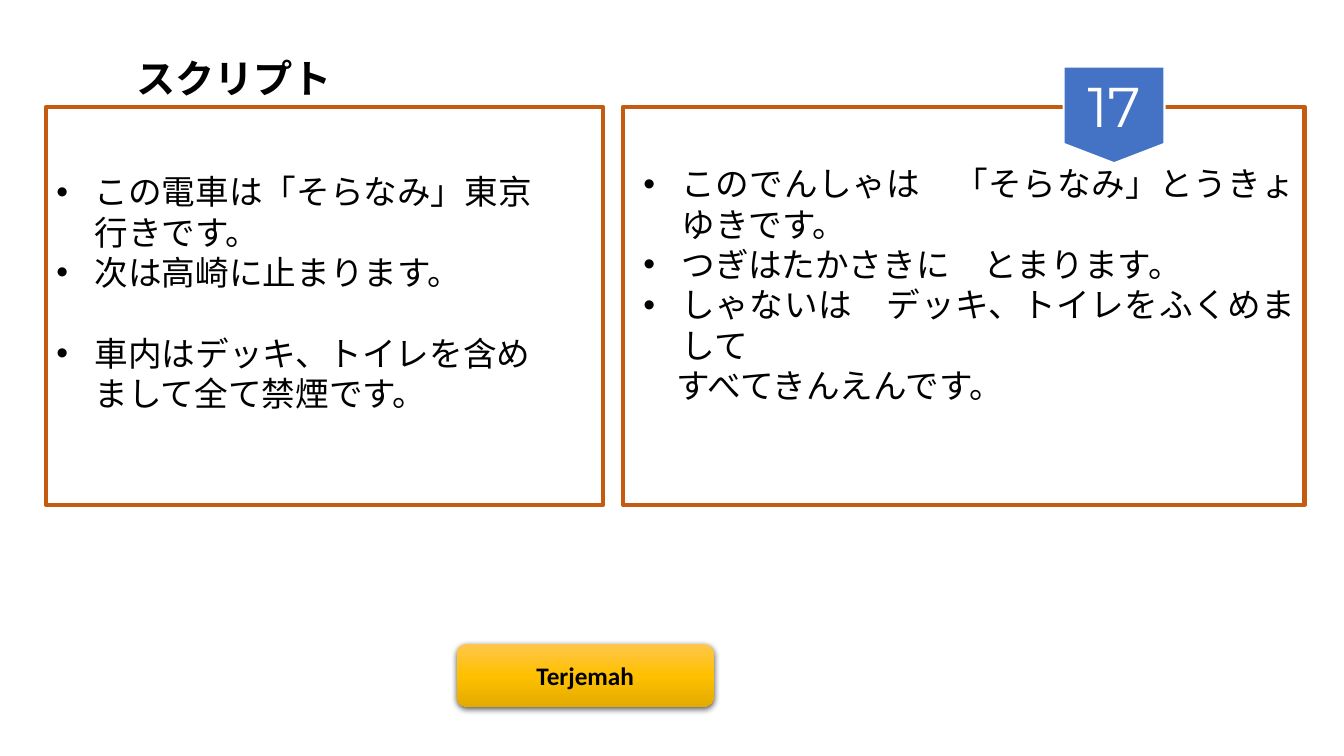
import pptx
import pptx.util
import pptx.dml.color
import pptx.enum.shapes
import pptx.enum.text
import pptx.oxml.ns
from lxml import etree

Inches, Pt = pptx.util.Inches, pptx.util.Pt
RGBColor = pptx.dml.color.RGBColor
SHAPE = pptx.enum.shapes.MSO_SHAPE
ALIGN = pptx.enum.text.PP_ALIGN
ANCHOR = pptx.enum.text.MSO_ANCHOR
AUTO_SIZE = pptx.enum.text.MSO_AUTO_SIZE
qn = pptx.oxml.ns.qn

BLACK = RGBColor(0x00, 0x00, 0x00)
WHITE = RGBColor(0xFF, 0xFF, 0xFF)
ORANGE = RGBColor(0xC5, 0x5A, 0x11)
BLUE = RGBColor(0x44, 0x72, 0xC4)
GOLD_LIGHT = RGBColor(0xFF, 0xC6, 0x4B)
GOLD = RGBColor(0xFF, 0xC0, 0x00)
GOLD_DARK = RGBColor(0xE3, 0xAB, 0x00)

FRAME_TOP, FRAME_HEIGHT = 1.06, 3.95
HANGING = 0.38
LINE_GAP = Pt(29)

KANJI = ["この電車は「そらなみ」東京行きです。",
         "次は高崎に止まります。",
         "車内はデッキ、トイレを含めまして全て禁煙です。"]
KANA = ["このでんしゃは　「そらなみ」とうきょゆきです。",
        "つぎはたかさきに　とまります。",
        "しゃないは　デッキ、トイレをふくめまして"]
KANA_ENDING = "すべてきんえんです。"


def place(s, left, top, width, height):
    s.left, s.top = Inches(left), Inches(top)
    s.width, s.height = Inches(width), Inches(height)


def style(p, name, size, color, bold=False):
    for r in p.runs:
        r.font.name, r.font.size = name, Pt(size)
        r.font.color.rgb, r.font.bold = color, bold


def add_title(s, box):
    place(s, *box)
    tf = s.text_frame
    tf.text = "スクリプト"
    tf.auto_size = AUTO_SIZE.NONE
    tf.vertical_anchor = ANCHOR.TOP
    p = tf.paragraphs[0]
    p.alignment = ALIGN.LEFT
    style(p, "Calibri", 28, BLACK, True)


def set_indent(p, margin, hanging, bullet):
    pPr = p._p.get_or_add_pPr()
    pPr.set("marL", str(Inches(margin)))
    pPr.set("indent", str(-Inches(hanging)))
    if bullet:
        etree.SubElement(pPr, qn("a:buFont"), typeface="Arial")
        etree.SubElement(pPr, qn("a:buChar"), char="•")
    else:
        etree.SubElement(pPr, qn("a:buNone"))


def add_script(s, box, lines, font, align):
    place(s, *box)
    tf = s.text_frame
    tf.text = "\n".join(lines)
    tf.word_wrap = True
    tf.auto_size = AUTO_SIZE.NONE
    tf.vertical_anchor = ANCHOR.TOP
    for p in tf.paragraphs:
        bullet = p.text != KANA_ENDING
        p.alignment = align
        p.space_before = Pt(0)
        set_indent(p, HANGING if bullet else 0.33, HANGING if bullet else 0, bullet)
        style(p, font, 24, BLACK)
    return tf


def add_frame(slide, left, width):
    s = slide.shapes.add_shape(SHAPE.RECTANGLE, Inches(left), Inches(FRAME_TOP),
                               Inches(width), Inches(FRAME_HEIGHT))
    s.shadow.inherit = False
    s.fill.background()
    s.line.color.rgb = ORANGE
    s.line.width = Pt(3)


def add_label(slide, kind, box, text, font, size, color, bold=False):
    s = slide.shapes.add_shape(kind, *map(Inches, box))
    s.shadow.inherit = False
    tf = s.text_frame
    tf.text = text
    tf.vertical_anchor = ANCHOR.MIDDLE
    p = tf.paragraphs[0]
    p.alignment = ALIGN.CENTER
    style(p, font, size, color, bold)
    return s


def add_button(slide, box):
    s = add_label(slide, SHAPE.ROUNDED_RECTANGLE, box, "Terjemah", "Calibri", 18, BLACK, True)
    s.line.fill.background()
    s.fill.gradient()
    s.fill.gradient_angle = 270
    stops = s._element.spPr.find(".//" + qn("a:gsLst"))
    for gs in list(stops):
        stops.remove(gs)
    for pos, color in ((0, GOLD_LIGHT), (50000, GOLD), (100000, GOLD_DARK)):
        gs = etree.SubElement(stops, qn("a:gs"), pos=str(pos))
        etree.SubElement(gs, qn("a:srgbClr"), val=str(color))
    effects = s._element.spPr.find(qn("a:effectLst"))
    shadow = etree.SubElement(effects, qn("a:outerShdw"), blurRad=str(Pt(4.5)),
                              dist=str(Pt(1.5)), dir="5400000", algn="ctr", rotWithShape="0")
    clr = etree.SubElement(shadow, qn("a:srgbClr"), val=str(BLACK))
    etree.SubElement(clr, qn("a:alpha"), val="63000")


def add_badge(slide, box):
    s = add_label(slide, SHAPE.FLOWCHART_OFFPAGE_CONNECTOR, box, "17", "Montserrat", 40, WHITE)
    s.fill.solid()
    s.fill.fore_color.rgb = BLUE
    s.line.color.rgb = WHITE
    s.line.width = Pt(1.5)


def main():
    prs = pptx.Presentation()
    prs.slide_width, prs.slide_height = Inches(13.33), Inches(7.5)
    slide = prs.slides.add_slide(prs.slide_layouts[3])
    title, left, right = slide.placeholders
    add_frame(slide, 0.46, 5.52)
    add_frame(slide, 6.18, 6.76)
    add_title(title, (1.25, 0.49, 3.48, 0.57))
    tf = add_script(left, (0.46, 1.65, 4.93, 2.5), KANJI, "Calibri", ALIGN.LEFT)
    tf.paragraphs[-1].space_before = LINE_GAP
    add_script(right, (6.28, 1.57, 6.67, 2.5), KANA + [KANA_ENDING], "Arial", ALIGN.JUSTIFY)
    add_button(slide, (4.53, 6.39, 2.55, 0.62))
    add_badge(slide, (10.55, 0.66, 1, 0.96))
    prs.save("out.pptx")


if __name__ == "__main__":
    main()
